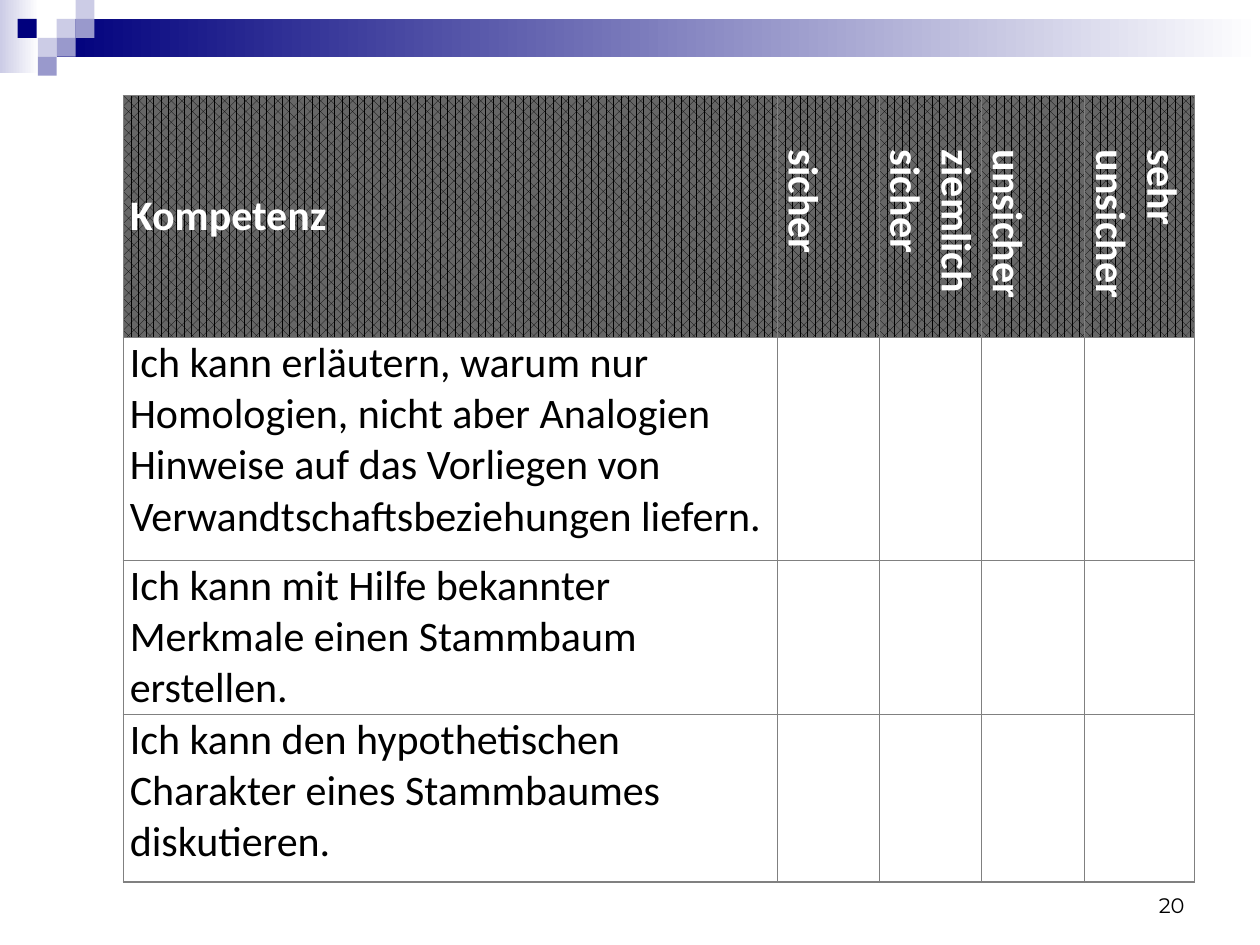
from lxml import etree
from pptx import Presentation
from pptx.dml.color import RGBColor
from pptx.enum import dml, shapes, text
from pptx.oxml import ns
from pptx.util import Inches, Pt


def rgb(code):
    return RGBColor.from_string(code)


def edge(cell, color, width):
    """Draw all four borders of a table cell."""
    props = cell._tc.get_or_add_tcPr()
    for spot, side in enumerate(("lnL", "lnR", "lnT", "lnB")):
        line = etree.Element(ns.qn("a:" + side), w=str(Pt(width)))
        fill = etree.SubElement(line, ns.qn("a:solidFill"))
        etree.SubElement(fill, ns.qn("a:srgbClr"), val=color)
        props.insert(spot, line)


prs = Presentation()
prs.slide_width, prs.slide_height = Inches(10), Inches(7.5)
slide = prs.slides.add_slide(prs.slide_layouts[6])

# Banner: two fading bars, then small squares
navy, mid, pale, white = "00007D", "9999CC", "CCCCE6", "FFFFFF"
side = 0.15
bars = [(0, 0, 0.31, 0.58, pale), (0.45, 0.15, 9.55, 0.3, navy)]
tiles = [(0.45, 0.15, pale), (0.6, 0, pale), (0.6, 0.15, mid), (0.3, 0.3, pale),
         (0.14, 0.15, navy), (0.45, 0.3, mid), (0.3, 0.45, mid)]
boxes = [(*bar, True) for bar in bars]
boxes += [(x, y, side, side, color, False) for x, y, color in tiles]
for x, y, w, h, color, fade in boxes:
    box = slide.shapes.add_shape(shapes.MSO_SHAPE.RECTANGLE,
                                 Inches(x), Inches(y), Inches(w), Inches(h))
    box.shadow.inherit = False
    box.line.fill.background()
    if fade:
        box.fill.gradient()
        box.fill.gradient_angle = 0
        for stop, spot, tone in zip(box.fill.gradient_stops, (0, 1), (color, white)):
            stop.position = spot
            stop.color.rgb = rgb(tone)
    else:
        box.fill.solid()
        box.fill.fore_color.rgb = rgb(color)

# Self-assessment table; "\n" starts a paragraph, "\v" a line
heads = ["Kompetenz", "sicher", "ziemlich\nsicher", "unsicher", "sehr\nunsicher"]
skills = [
    "Ich kann erläutern, warum nur Homologien, nicht aber Analogien Hinweise "
    "auf das Vorliegen von Verwandtschaftsbeziehungen liefern.",
    "Ich kann mit Hilfe bekannter Merkmale einen Stammbaum erstellen.",
    "Ich kann den hypothetischen Charakter eines Stammbaumes\vdiskutieren.",
]
rows = [heads] + [[skill] + [""] * 4 for skill in skills]
widths = [5.19, 0.81, 0.81, 0.82, 0.87]
heights = [1.92, 1.77, 1.22, 1.33]
table = slide.shapes.add_table(len(rows), len(widths), Inches(0.98), Inches(0.76),
                               Inches(sum(widths)), Inches(sum(heights))).table
table.first_row = table.horz_banding = False
for col, width in zip(table.columns, widths):
    col.width = Inches(width)
for row, height in zip(table.rows, heights):
    row.height = Inches(height)

pad = {"margin_left": Inches(0.05), "margin_right": Inches(0.05),
       "margin_top": 0, "margin_bottom": 0}
for r, words in enumerate(rows):
    head = r == 0
    for c, word in enumerate(words):
        cell = table.cell(r, c)
        for name, value in pad.items():
            setattr(cell, name, value)
        if head:
            cell.vertical_anchor = text.MSO_ANCHOR.MIDDLE
            cell.fill.patterned()
            cell.fill.pattern = dml.MSO_PATTERN.PERCENT_60
            cell.fill.fore_color.rgb = rgb("000000")
            cell.fill.back_color.rgb = rgb("666666")
        else:
            cell.fill.background()
        edge(cell, "808080", 1)
        cell.text_frame.text = word
        for para in cell.text_frame.paragraphs:
            look = {"size": Pt(24), "name": "Calibri", "bold": head}
            for name, value in look.items():
                setattr(para.font, name, value)
                for run in para.runs:
                    setattr(run.font, name, value)
            for run in para.runs:
                run.font.color.rgb = rgb(white if head else "000000")
            if head and c:
                para._p.get_or_add_pPr().set("marL", str(Inches(0.38)))
        if head and c:
            cell._tc.get_or_add_tcPr().set("vert", "vert")

# Page number
note = slide.shapes.add_textbox(Inches(7.17), Inches(6.83), Inches(2.33), Inches(0.5))
frame = note.text_frame
frame.word_wrap = True
frame.vertical_anchor = text.MSO_ANCHOR.BOTTOM
para = frame.paragraphs[0]
para.alignment = text.PP_ALIGN.RIGHT
run = para.add_run()
run.text = "20"
for name, value in {"size": Pt(12), "name": "Montserrat"}.items():
    setattr(run.font, name, value)
run.font.color.rgb = rgb("000000")

prs.save("out.pptx")
